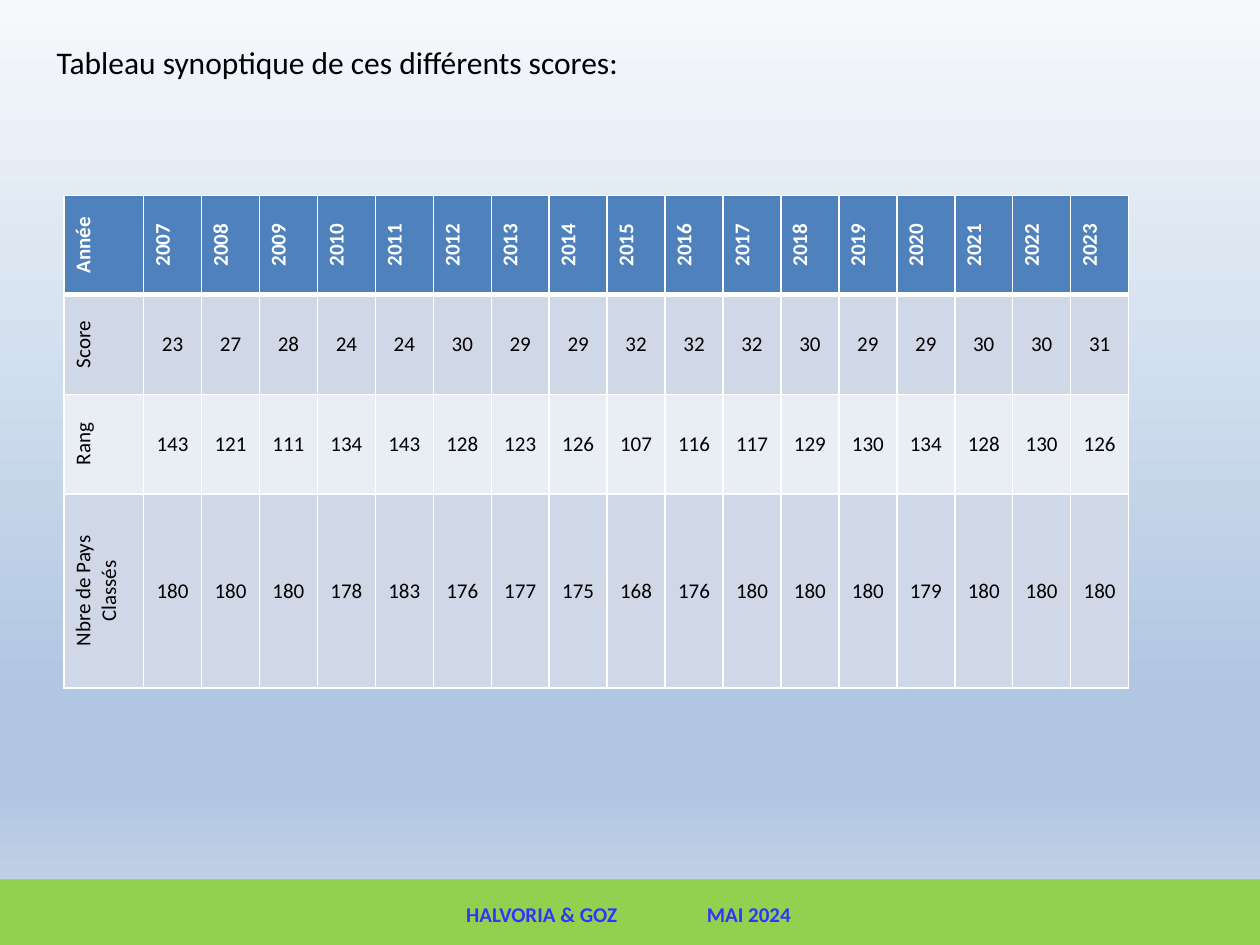
import copy

import pptx
import pptx.util
from pptx.dml.color import RGBColor
from pptx.enum.shapes import MSO_SHAPE
from pptx.enum.text import MSO_ANCHOR, PP_ALIGN
from pptx.oxml import parse_xml
from pptx.oxml.ns import nsdecls, qn
from pptx.util import Inches, Pt

HEADING = "Tableau synoptique de ces différents scores:"
FOOTER = "HALVORIA & GOZ\tMAI 2024"
SCORES = [
    ("Année", range(2007, 2024)),
    ("Score", [23, 27, 28, 24, 24, 30, 29, 29, 32, 32, 32, 30, 29, 29, 30, 30, 31]),
    ("Rang", [143, 121, 111, 134, 143, 128, 123, 126, 107, 116, 117, 129, 130, 134,
              128, 130, 126]),
    ("Nbre de Pays Classés", [180, 180, 180, 178, 183, 176, 177, 175, 168, 176, 180,
                              180, 180, 179, 180, 180, 180]),
]
COLORS = {
    "header": "4F81BD", "odd": "D0D8E8", "even": "E9EDF4", "white": "FFFFFF",
    "black": "000000", "footer": "92D050", "footer_text": "3333FF",
}
SKY = [(0, "F6F9FC"), (0.74, "B0C6E1"), (0.83, "B0C6E1"), (1, "CAD9EB")]
LABEL_WIDTH, YEAR_WIDTH = 0.63, 0.46
ROW_HEIGHTS = [0.79, 0.79, 0.79, 1.54]
FONT = "Calibri"


def rgb(name):
    return RGBColor.from_string(COLORS[name])


def style(paragraph, size, color, align, bold=False):
    paragraph.alignment = align
    paragraph.font.name = FONT
    paragraph.font.size = Pt(size)
    paragraph.font.bold = bold
    paragraph.font.color.rgb = rgb(color)


def paint_background(slide):
    fill = slide.background.fill
    fill.gradient()
    fill.gradient_angle = 270
    stops = slide.element.find(".//" + qn("a:gsLst"))
    while len(stops) < len(SKY):
        stops.append(copy.deepcopy(stops[0]))
    for stop, (position, color) in zip(fill.gradient_stops, SKY):
        stop.position = position
        stop.color.rgb = RGBColor.from_string(color)


def add_borders(cell, bottom):
    for side, width in (("L", 1), ("R", 1), ("T", 1), ("B", bottom)):
        cell._tc.get_or_add_tcPr().append(parse_xml(
            f'<a:ln{side} {nsdecls("a")} w="{Pt(width)}"><a:solidFill>'
            f'<a:srgbClr val="{COLORS["white"]}"/></a:solidFill></a:ln{side}>'))


def add_footer(slide, width):
    band = slide.shapes.add_shape(
        MSO_SHAPE.RECTANGLE, 0, Inches(6.98), width, Inches(0.55))
    band.shadow.inherit = False
    band.fill.solid()
    band.fill.fore_color.rgb = rgb("footer")
    band.line.fill.background()
    frame = band.text_frame
    frame.margin_left = Inches(3.7)
    frame.vertical_anchor = MSO_ANCHOR.MIDDLE
    frame.text = FOOTER
    paragraph = frame.paragraphs[0]
    style(paragraph, 12, "footer_text", PP_ALIGN.LEFT, bold=True)
    paragraph._p.get_or_add_pPr().insert(0, parse_xml(
        f'<a:tabLst {nsdecls("a")}><a:tab pos="{Inches(1.91)}" algn="l"/></a:tabLst>'))


def add_heading(slide):
    heading = slide.shapes.title
    heading.left, heading.top = Inches(0.35), Inches(0.29)
    heading.width, heading.height = Inches(9.29), Inches(1.01)
    heading.text_frame.text = HEADING
    heading.text_frame.vertical_anchor = MSO_ANCHOR.TOP
    style(heading.text_frame.paragraphs[0], 18, "black", PP_ALIGN.JUSTIFY)


def add_scores(slide):
    year_count = len(SCORES[0][1])
    scores = slide.shapes.add_table(
        len(SCORES), year_count + 1, Inches(0.51), Inches(1.55),
        Inches(LABEL_WIDTH + year_count * YEAR_WIDTH), Inches(sum(ROW_HEIGHTS))).table
    for index, column in enumerate(scores.columns):
        column.width = Inches(YEAR_WIDTH if index else LABEL_WIDTH)
    for r, (label, values) in enumerate(SCORES):
        scores.rows[r].height = Inches(ROW_HEIGHTS[r])
        is_header = r == 0
        fill = "header" if is_header else "odd" if r % 2 else "even"
        for c, value in enumerate([label, *values]):
            cell = scores.cell(r, c)
            cell.text = str(value)
            cell.vertical_anchor = MSO_ANCHOR.MIDDLE
            style(cell.text_frame.paragraphs[0], 12,
                  "white" if is_header else "black", PP_ALIGN.CENTER, is_header)
            add_borders(cell, 3 if is_header else 1)
            cell.fill.solid()
            cell.fill.fore_color.rgb = rgb(fill)
            if is_header or c == 0:
                cell._tc.get_or_add_tcPr().set("vert", "vert270")


def main():
    deck = pptx.Presentation()
    deck.slide_width, deck.slide_height = Inches(10), Inches(7.5)
    slide = deck.slides.add_slide(deck.slide_layouts[5])
    paint_background(slide)
    add_footer(slide, deck.slide_width)
    add_heading(slide)
    add_scores(slide)
    deck.save("out.pptx")


if __name__ == "__main__":
    main()
